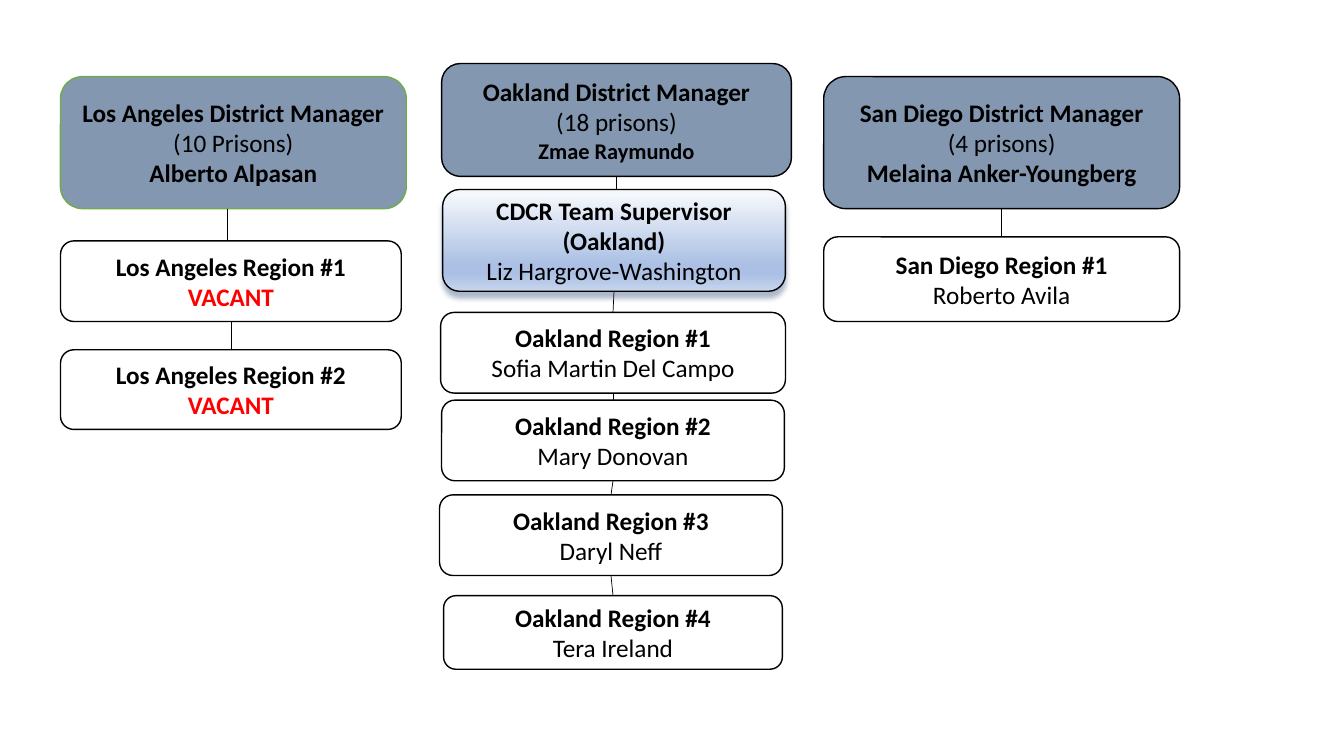
from dataclasses import dataclass

import pptx
import pptx.dml.color
import pptx.enum.shapes
import pptx.enum.text
import pptx.oxml
import pptx.oxml.ns
import pptx.presentation
import pptx.shapes.autoshape
import pptx.slide
import pptx.util
from lxml import etree

CELL = 0.1  # inches per grid column and row
BLACK, RED, STEEL, GREEN = "000000", "FF0000", "8497B0", "70AD47"
FADE = [(5, "F4F7FB"), (74, "ABC0E4"), (83, "ABC0E4"), (100, "C7D5ED")]
GLOW = "ADB9CA"


@dataclass
class Line:
    text: str
    bold: bool = False
    color: str = BLACK
    size: int = 18


@dataclass
class Box:
    """A card in grid units; stem is the column of a straight link from above."""
    left: float
    top: float
    width: float
    height: float
    lines: list[Line]
    fill: str = ""
    edge: str = BLACK
    faded: bool = False
    stem: float | None = None

    @property
    def mid(self) -> float:
        return self.left + self.width / 2

    @property
    def foot(self) -> float:
        return self.top + self.height


def head(text: str) -> Line:
    return Line(text, bold=True)


VACANT = Line("VACANT", bold=True, color=RED)

CHAINS = [
    [
        Box(6, 7.6, 34.3, 13.1,
            [head("Los Angeles District Manager"), Line("(10 Prisons)"),
             head("Alberto Alpasan")], fill=STEEL, edge=GREEN),
        Box(6, 23.9, 33.8, 8, [head("Los Angeles Region #1"), VACANT], stem=22.5),
        Box(6, 34.7, 33.8, 7.9, [head("Los Angeles Region #2"), VACANT]),
    ],
    [
        Box(43.8, 6.3, 34.7, 11.2,
            [head("Oakland District Manager"), Line("(18 prisons)"),
             Line("Zmae Raymundo", bold=True, size=16)], fill=STEEL),
        Box(43.9, 18.8, 34, 10.1,
            [head("CDCR Team Supervisor (Oakland)"),
             Line("Liz Hargrove-Washington")], faded=True, stem=61.1),
        Box(43.7, 31, 34.2, 8,
            [head("Oakland Region #1"), Line("Sofia Martin Del Campo")]),
        Box(43.8, 39.7, 34, 8, [head("Oakland Region #2"), Line("Mary Donovan")]),
        Box(43.6, 49.1, 34, 8, [head("Oakland Region #3"), Line("Daryl Neff")]),
        Box(44, 59.1, 33.6, 7.3, [head("Oakland Region #4"), Line("Tera Ireland")]),
    ],
    [
        Box(81.7, 7.6, 35.3, 13.1,
            [head("San Diego District Manager"), Line("(4 prisons)"),
             head("Melaina Anker-Youngberg")], fill=STEEL),
        Box(81.7, 23.5, 35.3, 8.4,
            [head("San Diego Region #1"), Line("Roberto Avila")]),
    ],
]


def grid(cells: float) -> pptx.util.Length:
    return pptx.util.Inches(cells * CELL)


def rgb(code: str) -> pptx.dml.color.RGBColor:
    return pptx.dml.color.RGBColor.from_string(code)


def add_node(root: etree.ElementBase, tag: str, **attrs: str) -> etree.ElementBase:
    return etree.SubElement(root, pptx.oxml.ns.qn(tag), attrs)


def fade(shape: pptx.shapes.autoshape.Shape) -> None:
    """Give the shape a four-stop vertical gradient and a soft drop shadow."""
    shape.fill.gradient()
    shape.fill.gradient_angle = 270
    props = shape._element.spPr
    stops = props.find(".//" + pptx.oxml.ns.qn("a:gsLst"))
    for old in list(stops):
        stops.remove(old)
    for share, code in FADE:
        stop = add_node(stops, "a:gs", pos=str(share * 1000))
        add_node(stop, "a:srgbClr", val=code)
    effects = props.find(pptx.oxml.ns.qn("a:effectLst"))
    depth = str(pptx.util.Pt(4))
    glow = add_node(effects, "a:outerShdw", blurRad=depth, dist=depth,
                    dir="5400000", algn="ctr", rotWithShape="0")
    add_node(glow, "a:srgbClr", val=GLOW)


def draw_box(slide: pptx.slide.Slide, box: Box) -> None:
    shape = slide.shapes.add_shape(
        pptx.enum.shapes.MSO_SHAPE.ROUNDED_RECTANGLE,
        grid(box.left), grid(box.top), grid(box.width), grid(box.height))
    shape.line.color.rgb = rgb(box.edge)
    shape.line.width = pptx.util.Pt(1)
    shape.shadow.inherit = False
    if box.faded:
        fade(shape)
    elif box.fill:
        shape.fill.solid()
        shape.fill.fore_color.rgb = rgb(box.fill)
    else:
        shape.fill.background()
    frame = shape.text_frame
    frame.word_wrap = True
    frame.vertical_anchor = pptx.enum.text.MSO_ANCHOR.MIDDLE
    for index, line in enumerate(box.lines):
        para = frame.add_paragraph() if index else frame.paragraphs[0]
        para.text = line.text
        para.alignment = pptx.enum.text.PP_ALIGN.CENTER
        font = para.font
        font.name = "Calibri"
        font.size = pptx.util.Pt(line.size)
        font.bold = line.bold
        font.color.rgb = rgb(line.color)


def draw_link(slide: pptx.slide.Slide, upper: Box, lower: Box) -> None:
    start, end = upper.mid, lower.mid
    if lower.stem is not None:
        start = end = lower.stem
    link = slide.shapes.add_connector(
        pptx.enum.shapes.MSO_CONNECTOR.STRAIGHT,
        grid(start), grid(upper.foot), grid(end), grid(lower.top))
    link.line.color.rgb = rgb(BLACK)
    link.line.width = pptx.util.Pt(0.5)
    add_node(link._element.spPr, "a:effectLst")


def main() -> None:
    deck = pptx.Presentation()
    deck.slide_width = pptx.util.Inches(13.33)
    deck.slide_height = pptx.util.Inches(7.5)
    slide = deck.slides.add_slide(deck.slide_layouts.get_by_name("Blank"))
    for chain in CHAINS:
        for box in chain:
            draw_box(slide, box)
        for upper, lower in zip(chain, chain[1:]):
            draw_link(slide, upper, lower)
    deck.save("out.pptx")


if __name__ == "__main__":
    main()
